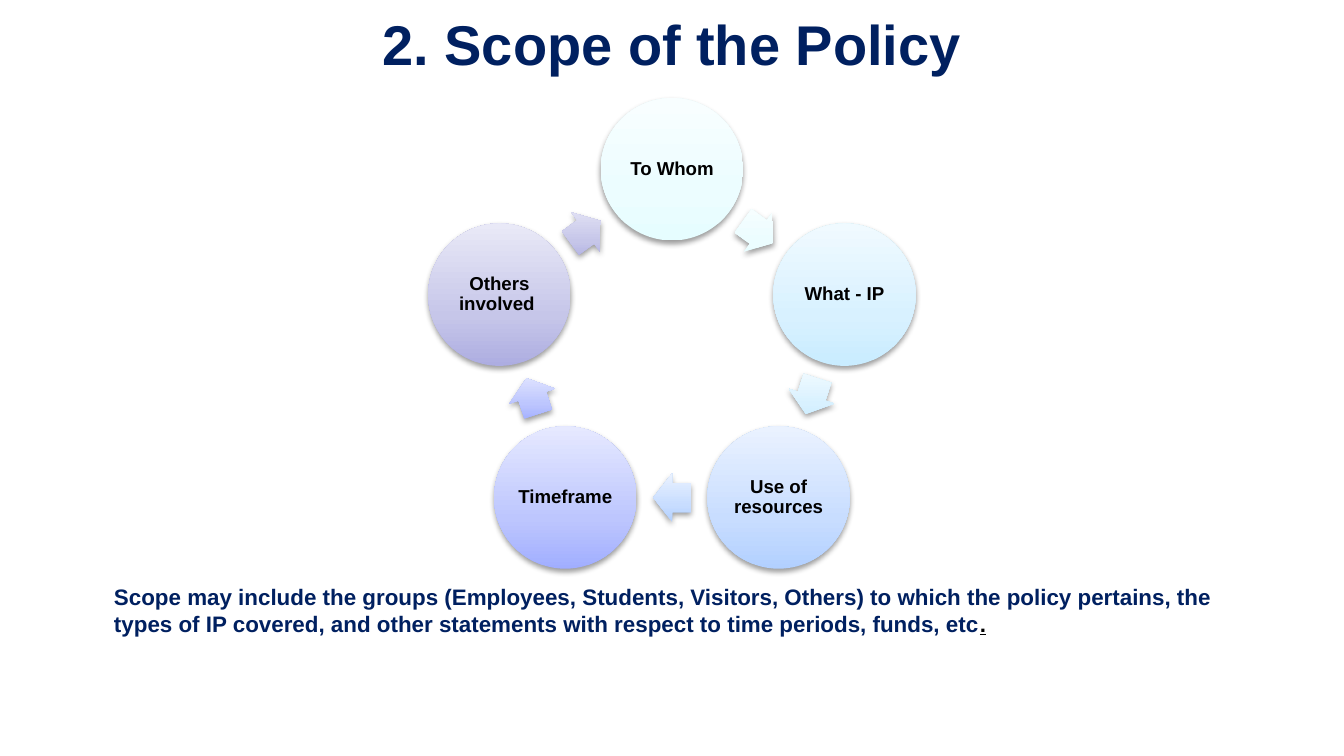
from dataclasses import dataclass
from math import cos, radians, sin

from lxml import etree
from pptx import Presentation
from pptx.dml.color import RGBColor
from pptx.enum.shapes import MSO_SHAPE as Preset
from pptx.enum.text import MSO_ANCHOR as Anchor, PP_ALIGN as Align
from pptx.oxml.ns import nsdecls, qn
from pptx.util import Inches, Pt

NAVY = "002060"
BLACK = "000000"
CENTER_X, CENTER_Y, RADIUS = 5, 2.61, 1.35
CIRCLE_SIZE = 1.06
ARROW_WIDTH, ARROW_HEIGHT = 0.28, 0.36


@dataclass
class Stage:
    label: str
    bottom: str
    middle: str
    top: str


STAGES = [
    Stage("To Whom", "E6FDFF", "ECFDFF", "F8FEFF"),
    Stage("What - IP", "C9ECFF", "D8F1FF", "F0FAFF"),
    Stage("Use of resources", "B2D0FF", "C8DDFF", "EAF2FF"),
    Stage("Timeframe", "A1AEFF", "BDC6FE", "E6E9FF"),
    Stage("Others involved ", "ADADE1", "C6C6E9", "E9E9F7"),
]


def color(value: str) -> RGBColor:
    return RGBColor.from_string(value)


def add_span(para, text: str, *, size: float, hue: str = BLACK, underline: bool = False):
    span = para.add_run()
    span.text = text
    font = span.font
    font.name, font.size, font.bold = "Arial", Pt(size), True
    font.color.rgb = color(hue)
    if underline:
        font.underline = True


def set_up_frame(frame, *, inset_x: float, inset_y: float, anchor=Anchor.TOP):
    """Set wrapping, insets and anchor, and return the first paragraph."""
    frame.word_wrap = True
    frame.vertical_anchor = anchor
    frame.margin_left = frame.margin_right = Inches(inset_x)
    frame.margin_top = frame.margin_bottom = Inches(inset_y)
    return frame.paragraphs[0]


def add_soft_shape(page, preset, x: float, y: float, width: float, height: float, stage: Stage):
    """Add a shape centred on x, y with an upward gradient and a soft shadow."""
    shape = page.shapes.add_shape(preset, Inches(x - width / 2), Inches(y - height / 2),
                                  Inches(width), Inches(height))
    shape.line.fill.background()
    shape.fill.background()
    shape.shadow.inherit = False
    properties = shape._element.spPr
    stops = "".join(
        f'<a:gs pos="{place * 1000}"><a:srgbClr val="{hue}"/></a:gs>'
        for place, hue in ((0, stage.bottom), (35, stage.middle), (100, stage.top)))
    gradient = etree.fromstring(
        f'<a:gradFill {nsdecls("a")} rotWithShape="0"><a:gsLst>{stops}</a:gsLst>'
        '<a:lin ang="16200000" scaled="0"/></a:gradFill>')
    properties.replace(properties.find(qn("a:noFill")), gradient)
    properties.find(qn("a:effectLst")).append(etree.fromstring(
        f'<a:outerShdw {nsdecls("a")} blurRad="{Pt(3.1)}" dist="{Pt(1.6)}" dir="5400000" '
        f'rotWithShape="0"><a:srgbClr val="{BLACK}"><a:alpha val="38000"/></a:srgbClr>'
        '</a:outerShdw>'))
    return shape


def point_on_ring(angle: float, radius: float) -> tuple[float, float]:
    """Return the point at a clockwise angle from the top of the ring."""
    return (CENTER_X + radius * sin(radians(angle)),
            CENTER_Y - radius * cos(radians(angle)))


def add_cycle(page):
    step = 360 / len(STAGES)
    for index, stage in enumerate(STAGES):
        circle = add_soft_shape(page, Preset.OVAL, *point_on_ring(index * step, RADIUS),
                                CIRCLE_SIZE, CIRCLE_SIZE, stage)
        para = set_up_frame(circle.text_frame, inset_x=0.01, inset_y=0.01,
                            anchor=Anchor.MIDDLE)
        para.alignment, para.line_spacing = Align.CENTER, 0.9
        add_span(para, stage.label, size=10)

        angle = (index + 0.5) * step
        middle = point_on_ring(angle, RADIUS * cos(radians(step / 2)))
        arrow = add_soft_shape(page, Preset.RIGHT_ARROW, *middle,
                               ARROW_WIDTH, ARROW_HEIGHT, stage)
        arrow.adjustments[0], arrow.adjustments[1] = 0.6, 0.5
        arrow.rotation = angle


def main():
    deck = Presentation()
    deck.slide_width = Inches(10)
    deck.slide_height = Inches(10 * 9 / 16)
    page = deck.slides.add_slide(deck.slide_layouts[6])

    title = page.shapes.add_textbox(Inches(0), Inches(0.1), Inches(10), Inches(0.62))
    para = set_up_frame(title.text_frame, inset_x=0.05, inset_y=0.03)
    para.alignment, para.line_spacing = Align.CENTER, 0.9
    add_span(para, "2. Scope of the Policy", size=30, hue=NAVY)

    add_cycle(page)

    summary = page.shapes.add_textbox(Inches(0.75), Inches(4.29), Inches(8.5), Inches(0.5))
    para = set_up_frame(summary.text_frame, inset_x=0.1, inset_y=0.05)
    add_span(para, "Scope may include the groups (Employees, Students, Visitors, Others) "
             "to which the policy pertains, the types of IP covered, and other statements "
             "with respect to time periods, funds, etc", size=12, hue=NAVY)
    add_span(para, ".", size=12, underline=True)

    deck.save("out.pptx")


if __name__ == "__main__":
    main()
